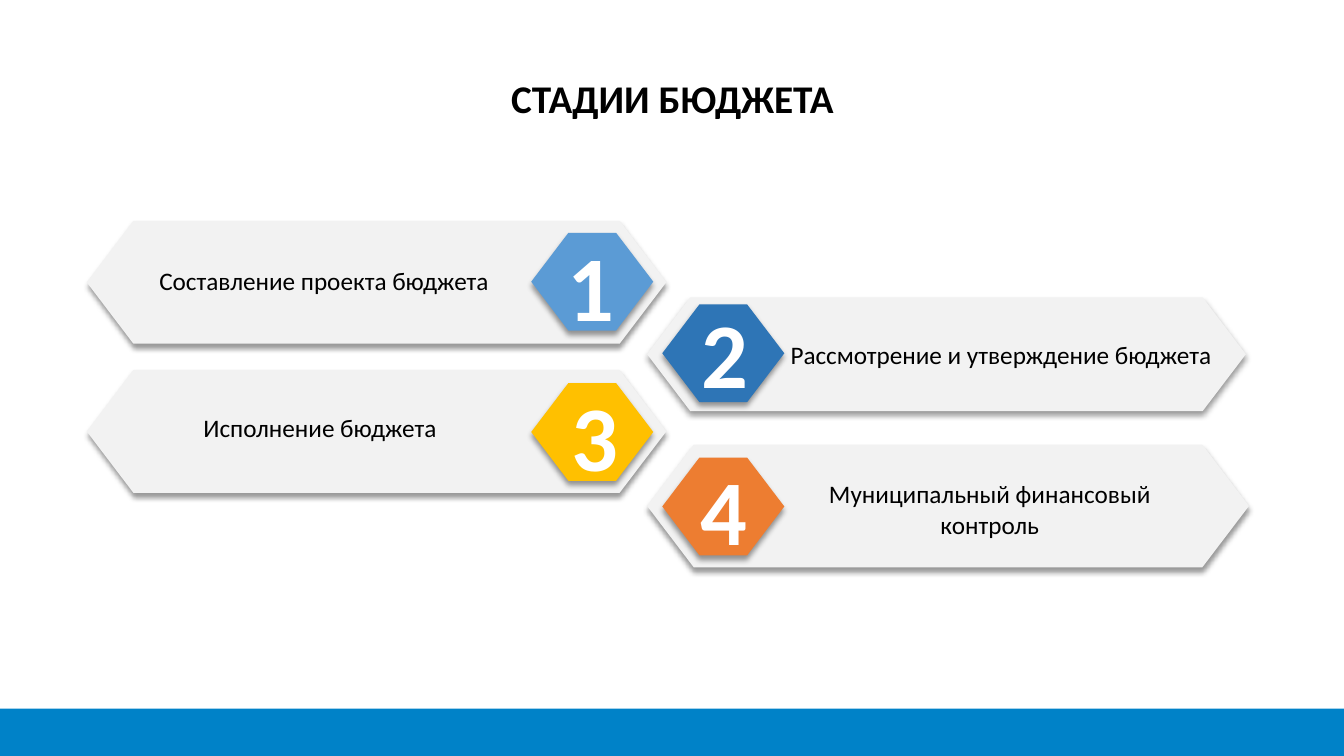
from dataclasses import dataclass

from lxml.etree import SubElement
from pptx import Presentation
from pptx.dml.color import RGBColor
from pptx.enum.shapes import MSO_SHAPE as Preset
from pptx.enum.text import MSO_ANCHOR as Anchor, MSO_AUTO_SIZE as AutoSize, PP_ALIGN as Align
from pptx.oxml.ns import qn
from pptx.shapes.autoshape import Shape
from pptx.text.text import TextFrame
from pptx.util import Inches, Pt

BLACK = RGBColor(0x00, 0x00, 0x00)
WHITE = RGBColor(0xFF, 0xFF, 0xFF)
BAR_GREY = RGBColor(0xF2, 0xF2, 0xF2)
LIGHT_BLUE = RGBColor(0x5B, 0x9B, 0xD5)
DARK_BLUE = RGBColor(0x2E, 0x75, 0xB6)
YELLOW = RGBColor(0xFF, 0xC0, 0x00)
ORANGE = RGBColor(0xED, 0x7D, 0x31)
FOOTER_BLUE = RGBColor(0x00, 0x82, 0xC8)

FONT = "Calibri"
SLIDE_WIDTH, SLIDE_HEIGHT = Inches(13.33), Inches(7.5)
HEXAGON_SLANT = 0.38
BADGE_WIDTH, BADGE_HEIGHT = 9.08, 12.93
NUMBER_WIDTH, NUMBER_HEIGHT = 3.9, 8
LEFT_BADGE, RIGHT_BADGE = 39.53, 49.28


@dataclass(frozen=True)
class Box:
    """A rectangle in percent of the slide's width and height."""
    left: float
    top: float
    width: float
    height: float

    def lengths(self) -> tuple[int, int, int, int]:
        return (round(SLIDE_WIDTH * self.left / 100), round(SLIDE_HEIGHT * self.top / 100),
                round(SLIDE_WIDTH * self.width / 100), round(SLIDE_HEIGHT * self.height / 100))


@dataclass(frozen=True)
class Stage:
    label: str
    color: RGBColor
    bar: Box
    badge_left: float
    badge_top: float
    label_box: Box
    number_left: float
    number_top: float


STAGES = [
    Stage("Составление проекта бюджета", LIGHT_BLUE, Box(6.45, 29.2, 43.13, 16.27),
          LEFT_BADGE, 30.8, Box(8.55, 34.4, 31.13, 5.33), 42, 33.6),
    Stage("Рассмотрение и утверждение бюджета", DARK_BLUE, Box(48.15, 39.33, 44.55, 15.07),
          RIGHT_BADGE, 40.27, Box(57.38, 44.27, 34.2, 5.33), 51.98, 42.53),
    Stage("Исполнение бюджета", YELLOW, Box(6.45, 48.93, 43.13, 16.27),
          LEFT_BADGE, 50.67, Box(8.25, 53.87, 31.13, 5.33), 42.3, 53.47),
    Stage("Муниципальный финансовый контроль", ORANGE, Box(48.15, 58.8, 44.78, 16.27),
          RIGHT_BADGE, 60.53, Box(57.6, 62.67, 32.1, 9.47), 51.9, 63.33),
]


def add_filled(shapes, preset: Preset, box: Box, color: RGBColor) -> Shape:
    shape = shapes.add_shape(preset, *box.lengths())
    shape.shadow.inherit = False
    shape.fill.solid()
    shape.fill.fore_color.rgb = color
    shape.line.fill.background()
    return shape


def add_hexagon(shapes, box: Box, color: RGBColor) -> None:
    """Add a hexagon with a soft shadow falling straight down."""
    hexagon = add_filled(shapes, Preset.HEXAGON, box, color)
    hexagon.adjustments[0] = HEXAGON_SLANT
    effects = hexagon.element.spPr.find(qn("a:effectLst"))
    shadow = SubElement(effects, qn("a:outerShdw"), blurRad=str(Pt(4)), dist=str(Pt(3)),
                        dir="5400000", algn="t", rotWithShape="0")
    shadow_color = SubElement(shadow, qn("a:srgbClr"), val=str(BLACK))
    SubElement(shadow_color, qn("a:alpha"), val="40000")


def write(frame: TextFrame, text: str, size: int, color: RGBColor, bold: bool = False):
    """Write one centred run and return its paragraph."""
    frame.word_wrap = True
    paragraph = frame.paragraphs[0]
    paragraph.alignment = Align.CENTER
    run = paragraph.add_run()
    run.text = text
    run.font.name = FONT
    run.font.size = Pt(size)
    run.font.bold = bold
    run.font.color.rgb = color
    return paragraph


def add_title(slide, text: str) -> None:
    title = slide.shapes.title
    title.left, title.top, title.width, title.height = Box(1.2, 7.47, 97.65, 11.73).lengths()
    title.text_frame.vertical_anchor = Anchor.MIDDLE
    write(title.text_frame, text, 28, BLACK, bold=True).line_spacing = 0.9


def add_stage(slide, stage: Stage) -> None:
    group = slide.shapes.add_group_shape()
    add_hexagon(group.shapes, stage.bar, BAR_GREY)
    badge = Box(stage.badge_left, stage.badge_top, BADGE_WIDTH, BADGE_HEIGHT)
    add_hexagon(group.shapes, badge, stage.color)
    label = group.shapes.add_textbox(*stage.label_box.lengths()).text_frame
    write(label, stage.label, 18, BLACK)
    label.auto_size = AutoSize.SHAPE_TO_FIT_TEXT


def add_number(slide, stage: Stage, number: int) -> None:
    box = Box(stage.number_left, stage.number_top, NUMBER_WIDTH, NUMBER_HEIGHT)
    frame = slide.shapes.add_textbox(*box.lengths()).text_frame
    frame.margin_left = frame.margin_right = frame.margin_top = frame.margin_bottom = 0
    frame.vertical_anchor = Anchor.MIDDLE
    write(frame, str(number), 66, WHITE, bold=True).space_before = Pt(7)


def main() -> None:
    presentation = Presentation()
    presentation.slide_width, presentation.slide_height = SLIDE_WIDTH, SLIDE_HEIGHT
    slide = presentation.slides.add_slide(presentation.slide_layouts.get_by_name("Title Only"))
    add_title(slide, "СТАДИИ БЮДЖЕТА")
    # Right-hand bars lie beneath the left-hand ones.
    for stage in STAGES[1::2] + STAGES[::2]:
        add_stage(slide, stage)
    for number, stage in enumerate(STAGES, start=1):
        add_number(slide, stage, number)
    add_filled(slide.shapes, Preset.RECTANGLE, Box(0, 93.73, 100, 6.27), FOOTER_BLUE)
    presentation.save("out.pptx")


if __name__ == "__main__":
    main()
